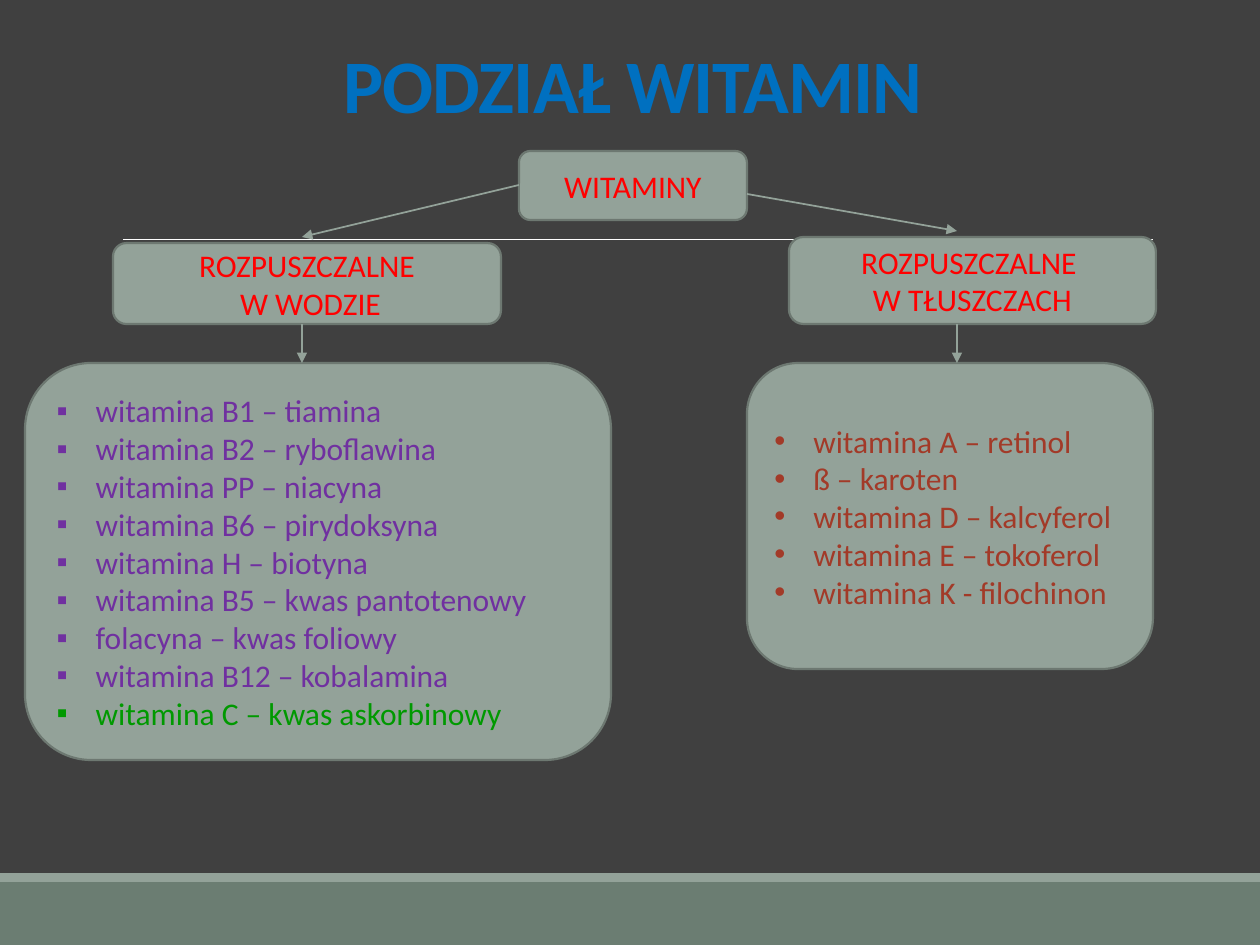
from lxml import etree
from pptx import Presentation
from pptx.dml.color import RGBColor
from pptx.enum.shapes import MSO_CONNECTOR, MSO_SHAPE
from pptx.enum.text import MSO_ANCHOR, MSO_AUTO_SIZE, PP_ALIGN
from pptx.oxml.ns import qn
from pptx.util import Pt

EMU_PER_PX = 914400 / 126
PAGE_WIDTH, PAGE_HEIGHT = 1260, 945
INDENT = 39

COLORS = {
    "background": "404040", "footer": "6B7D72", "sage": "93A299",
    "outline": "6D7871", "rule": "FFFFFF", "title": "0070C0",
    "heading": "FF0000", "water": "7030A0", "vitamin_c": "009900",
    "fat": "A23A28",
}

WATER_VITAMINS = [
    "witamina B1 – tiamina", "witamina B2 – ryboflawina",
    "witamina PP – niacyna", "witamina B6 – pirydoksyna",
    "witamina H – biotyna", "witamina B5 – kwas pantotenowy",
    "folacyna – kwas foliowy", "witamina B12 – kobalamina",
    "witamina C – kwas askorbinowy",
]
FAT_VITAMINS = [
    "witamina A – retinol", "ß – karoten", "witamina D – kalcyferol",
    "witamina E – tokoferol", "witamina K - filochinon",
]


def px(length):
    return round(length * EMU_PER_PX)


def color(name):
    return RGBColor.from_string(COLORS[name])


def apply_format(target, values):
    for name, value in values.items():
        setattr(target, name, value)


def add_span(para, text, color_name, **values):
    span = para.add_run()
    span.text = text
    apply_format(span.font, {"name": "Calibri", "size": Pt(18), **values})
    span.font.color.rgb = color(color_name)
    return span


def add_box(page, kind, box, fill, outline=None):
    shape = page.shapes.add_shape(kind, *map(px, box))
    shape.shadow.inherit = False
    shape.fill.solid()
    shape.fill.fore_color.rgb = color(fill)
    if outline:
        shape.line.color.rgb = color(outline)
        shape.line.width = Pt(1.25)
    else:
        shape.line.fill.background()
    return shape


def add_line(page, start, end, color_name="sage", width=1, arrow=True):
    line = page.shapes.add_connector(
        MSO_CONNECTOR.STRAIGHT, *map(px, (*start, *end)))
    line.line.color.rgb = color(color_name)
    line.line.width = Pt(width)
    properties = line._element.spPr
    if arrow:
        etree.SubElement(properties.find(qn("a:ln")), qn("a:tailEnd"),
                         type="triangle")
    etree.SubElement(properties, qn("a:effectLst"))


def add_card(page, box, lines, align, color_name, bullet=None, accents=()):
    """Rounded card with one paragraph per line, bulleted on request."""
    card = add_box(page, MSO_SHAPE.ROUNDED_RECTANGLE, box, "sage", "outline")
    frame = card.text_frame
    apply_format(frame, {"word_wrap": True,
                         "vertical_anchor": MSO_ANCHOR.MIDDLE})
    accents = dict(accents)
    for index, text in enumerate(lines):
        para = frame.paragraphs[0] if index == 0 else frame.add_paragraph()
        para.alignment = align
        add_span(para, text, accents.get(index, color_name))
        if bullet:
            properties = para._p.get_or_add_pPr()
            properties.set("marL", str(px(INDENT)))
            properties.set("indent", str(-px(INDENT)))
            etree.SubElement(properties, qn("a:buFont"), typeface="Arial")
            etree.SubElement(properties, qn("a:buChar"), char=bullet)


def add_backdrop(page):
    page.background.fill.solid()
    page.background.fill.fore_color.rgb = color("background")
    # Footer band with a lighter strip above it
    add_box(page, MSO_SHAPE.RECTANGLE,
            (0, 882, PAGE_WIDTH, PAGE_HEIGHT - 882), "footer")
    add_box(page, MSO_SHAPE.RECTANGLE, (0, 873, PAGE_WIDTH, 9), "sage")
    # Thin rule behind the headings
    add_line(page, (123, 239), (1153, 239), "rule", 0.5, arrow=False)


def add_title(page, box):
    title = page.shapes.title
    apply_format(title, dict(zip(("left", "top", "width", "height"),
                                 map(px, box))))
    apply_format(title.text_frame, {
        "vertical_anchor": MSO_ANCHOR.BOTTOM, "word_wrap": True,
        "auto_size": MSO_AUTO_SIZE.NONE})
    para = title.text_frame.paragraphs[0]
    apply_format(para, {"alignment": PP_ALIGN.CENTER, "line_spacing": 0.85})
    span = add_span(para, "PODZIAŁ WITAMIN", "title", size=Pt(43.2), bold=True)
    span._r.get_or_add_rPr().set("spc", "-50")


def add_branch(page, axis, source, tip, heading_box, heading, list_box, items,
               **list_format):
    """Heading over a list, joined by arrows that meet on a vertical axis."""
    add_card(page, heading_box, heading, PP_ALIGN.CENTER, "heading")
    add_card(page, list_box, items, **list_format)
    add_line(page, source, (axis, tip))
    add_line(page, (axis, heading_box[1] + heading_box[3]),
             (axis, list_box[1]))


def main():
    deck = Presentation()
    deck.slide_width, deck.slide_height = px(PAGE_WIDTH), px(PAGE_HEIGHT)
    page = deck.slides.add_slide(deck.slide_layouts[5])
    add_backdrop(page)
    add_title(page, (113, 39, 1040, 96))

    # Root of the tree
    root = (519, 151, 228, 69)
    add_card(page, root, ["WITAMINY"], PP_ALIGN.CENTER, "heading")

    # Water-soluble vitamins
    add_branch(page, 302, (root[0], 185), 237,
               (113, 243, 388, 81), ["ROZPUSZCZALNE", " W WODZIE"],
               (25, 363, 586, 397), WATER_VITAMINS,
               align=PP_ALIGN.LEFT, color_name="water", bullet="▪",
               accents={len(WATER_VITAMINS) - 1: "vitamin_c"})
    # Fat-soluble vitamins
    add_branch(page, 957, (root[0] + root[2], 194), 231,
               (789, 237, 367, 87), ["ROZPUSZCZALNE ", "W TŁUSZCZACH"],
               (747, 363, 406, 306), FAT_VITAMINS,
               align=PP_ALIGN.JUSTIFY, color_name="fat", bullet="•")
    deck.save("out.pptx")


if __name__ == "__main__":
    main()
